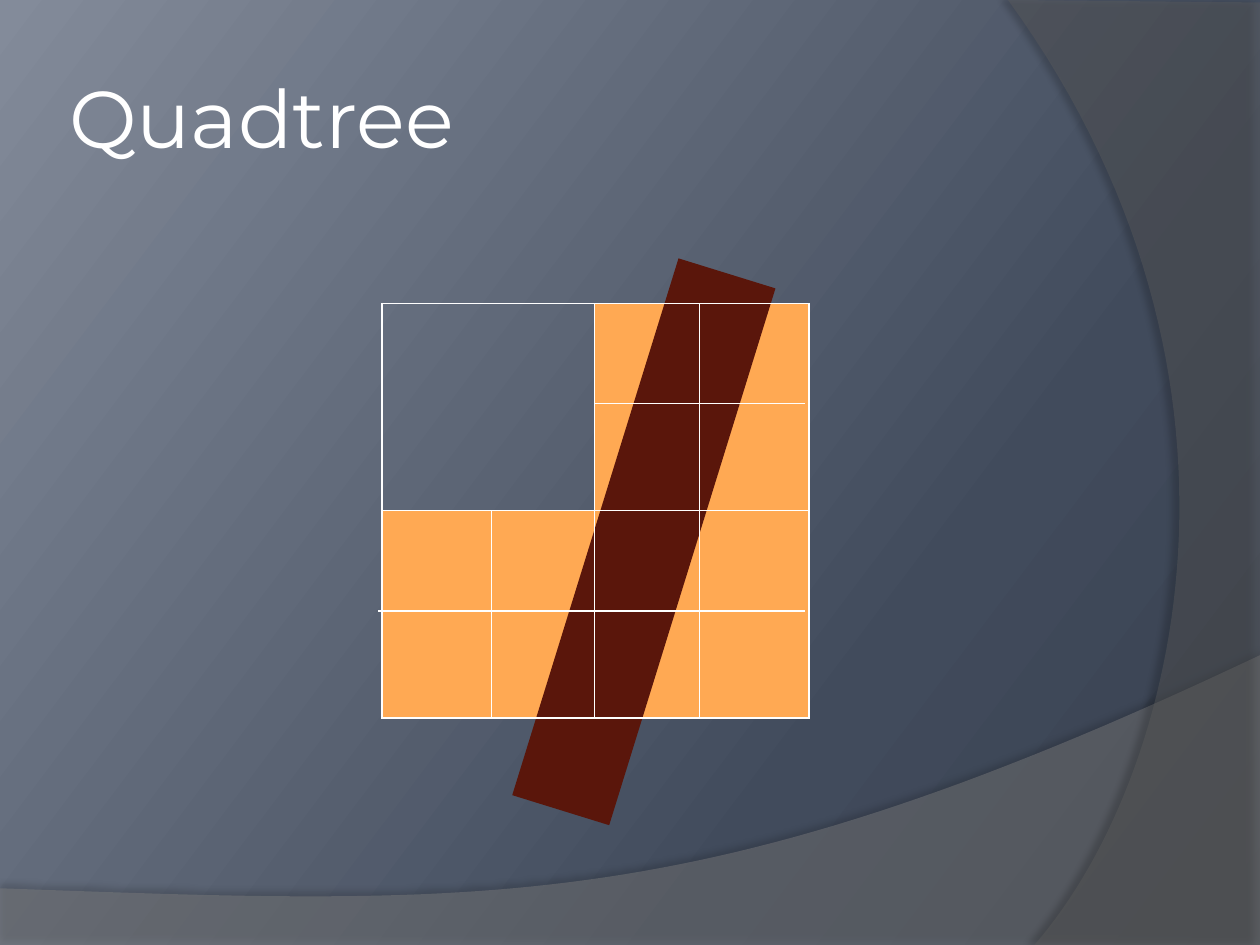
from typing import NamedTuple

from lxml.etree import SubElement
from pptx import Presentation
from pptx.dml.color import RGBColor
from pptx.enum.shapes import MSO_CONNECTOR, MSO_SHAPE
from pptx.enum.text import MSO_ANCHOR
from pptx.oxml import parse_xml
from pptx.oxml.ns import nsdecls, qn
from pptx.util import Inches, Pt

WHITE, ORANGE, BROWN = "FFFFFF", "FFA953", "5A160B"

# Grid lines of the quadtree, in inches
COLUMNS = (3.03, 3.9, 4.72, 5.55, 6.42)
ROWS = (2.41, 3.2, 4.05, 4.85, 5.7)
INSET = 0.03  # some dividers sit slightly left of the frame


class Point(NamedTuple):
    x: float
    y: float


class Block(NamedTuple):
    column: int
    row: int
    last_column: int
    last_row: int


class Divider(NamedTuple):
    block: Block
    start_shift: float = 0
    end_shift: float = 0


class Wave(NamedTuple):
    points: list[Point]
    color: str
    opacity: int
    shadow_opacity: int
    shadow_distance: float
    shadow_angle: int


def color(value: str) -> RGBColor:
    return RGBColor.from_string(value)


def curve(a: Point, b: Point, c: Point, d: Point, steps: int = 60) -> list[Point]:
    """Points along a cubic Bezier curve."""
    def blend(t: float, values: tuple) -> float:
        u = 1 - t
        weights = (u**3, 3 * u * u * t, 3 * u * t * t, t**3)
        return sum(w * v for w, v in zip(weights, values))

    return [Point(*(blend(i / steps, axis) for axis in zip(a, b, c, d)))
            for i in range(steps + 1)]


def paint_background(page, stops: dict[int, str], angle: int) -> None:
    marks = "".join(f'<a:gs pos="{position * 1000}"><a:srgbClr val="{value}"/></a:gs>'
                    for position, value in stops.items())
    page.background.fill.gradient()
    gradient = page.background.fill
    gradient.gradient_angle = 360 - angle
    stop_list = next(page.element.iter(qn("a:gsLst")))
    stop_list.getparent().replace(
        stop_list, parse_xml(f'<a:gsLst {nsdecls("a")}>{marks}</a:gsLst>'))


def add_wave(page, wave: Wave) -> None:
    corners = [(Inches(point.x), Inches(point.y)) for point in wave.points]
    builder = page.shapes.build_freeform(*corners[0])
    builder.add_line_segments(corners[1:], close=True)
    shape = builder.convert_to_shape()
    shape.fill.solid()
    shape.fill.fore_color.rgb = color(wave.color)
    shape.line.fill.background()
    properties = shape.element.spPr
    fill_color = next(properties.iter(qn("a:srgbClr")))
    SubElement(fill_color, qn("a:alpha"), val=str(wave.opacity * 1000))
    properties.append(parse_xml(
        f'<a:effectLst {nsdecls("a")}><a:outerShdw blurRad="{Pt(4)}" '
        f'dist="{Pt(wave.shadow_distance)}" dir="{wave.shadow_angle * 60000}" '
        f'algn="ctr" rotWithShape="0"><a:srgbClr val="000000">'
        f'<a:alpha val="{wave.shadow_opacity * 1000}"/></a:srgbClr>'
        f'</a:outerShdw></a:effectLst>'))


def frame(block: Block) -> list[int]:
    """Left, top, width and height of a block of grid cells."""
    left, top = COLUMNS[block.column], ROWS[block.row]
    width = COLUMNS[block.last_column] - left
    height = ROWS[block.last_row] - top
    return [Inches(length) for length in (left, top, width, height)]


def add_block(page, block: Block) -> None:
    shape = page.shapes.add_shape(MSO_SHAPE.RECTANGLE, *frame(block))
    shape.fill.solid()
    shape.fill.fore_color.rgb = color(ORANGE)
    shape.line.fill.background()
    shape.shadow.inherit = False


def add_line(page, start: Point, end: Point, value: str, width: float) -> None:
    ends = [Inches(length) for length in (*start, *end)]
    line = page.shapes.add_connector(MSO_CONNECTOR.STRAIGHT, *ends)
    line.line.color.rgb = color(value)
    line.line.width = Pt(width)
    SubElement(line.element.spPr, qn("a:effectLst"))


def add_divider(page, divider: Divider) -> None:
    block = divider.block
    start = Point(COLUMNS[block.column] + divider.start_shift, ROWS[block.row])
    end = Point(COLUMNS[block.last_column] + divider.end_shift, ROWS[block.last_row])
    add_line(page, start, end, WHITE, 0.75)


def add_frame_table(page, block: Block) -> None:
    table = page.shapes.add_table(1, 1, *frame(block)).table
    table.first_row = table.horz_banding = False
    cell = table.cell(0, 0)
    cell.fill.background()
    properties = cell._tc.get_or_add_tcPr()
    for index, side in enumerate(("lnL", "lnR", "lnT", "lnB")):
        properties.insert(index, parse_xml(
            f'<a:{side} {nsdecls("a")} w="{Pt(1)}"><a:solidFill>'
            f'<a:srgbClr val="{WHITE}"/></a:solidFill></a:{side}>'))


def add_title(page, text: str) -> None:
    box = page.shapes.add_textbox(Inches(0.5), Inches(0.3), Inches(8.17), Inches(1.25))
    body = box.text_frame
    body.word_wrap = True
    body.vertical_anchor = MSO_ANCHOR.MIDDLE
    body.margin_left = body.margin_right = Inches(0.05)
    body.margin_top = body.margin_bottom = Inches(0.05)
    paragraph = body.paragraphs[0]
    paragraph.text = text
    paragraph.font.name = "Montserrat"
    paragraph.font.size = Pt(46)
    paragraph.font.color.rgb = color(WHITE)


WAVES = (
    Wave([Point(0, 7.05), Point(0, 7.51), Point(10, 7.51),
          *curve(Point(10, 5.2), Point(5.59, 7.29), Point(3.91, 7.19), Point(0, 7.05))],
         "7F7F7F", 45, 35, 3.5, 270),
    Wave([Point(10, 0.02), Point(10, 7.5),
          *curve(Point(8.21, 7.5), Point(9.35, 6.19), Point(10.18, 3), Point(8, 0))],
         "5E5E5E", 40, 45, 4, 180),
)
OCCUPIED = (Block(2, 0, 4, 2), Block(0, 2, 4, 4))
DIVIDERS = (
    Divider(Block(2, 0, 2, 4)),
    Divider(Block(0, 2, 4, 2)),
    Divider(Block(0, 3, 4, 3), -INSET, -INSET),
    Divider(Block(3, 0, 3, 4)),
    Divider(Block(1, 2, 1, 4)),
    Divider(Block(2, 1, 4, 1), 0, -INSET),
)


def main() -> None:
    deck = Presentation()
    deck.slide_width, deck.slide_height = Inches(10), Inches(7.5)
    page = deck.slides.add_slide(deck.slide_layouts[6])

    # Backdrop
    paint_background(page, {0: "373F4D", 30: "414B5C", 100: "838B9A"}, 217)
    for wave in WAVES:
        add_wave(page, wave)

    # Title and quadtree with the bar crossing it
    for block in OCCUPIED:
        add_block(page, block)
    add_title(page, "Quadtree")
    add_line(page, Point(4.45, 6.43), Point(5.77, 2.17), BROWN, 58)
    add_frame_table(page, Block(0, 0, 4, 4))
    for divider in DIVIDERS:
        add_divider(page, divider)

    deck.save("out.pptx")


if __name__ == "__main__":
    main()
